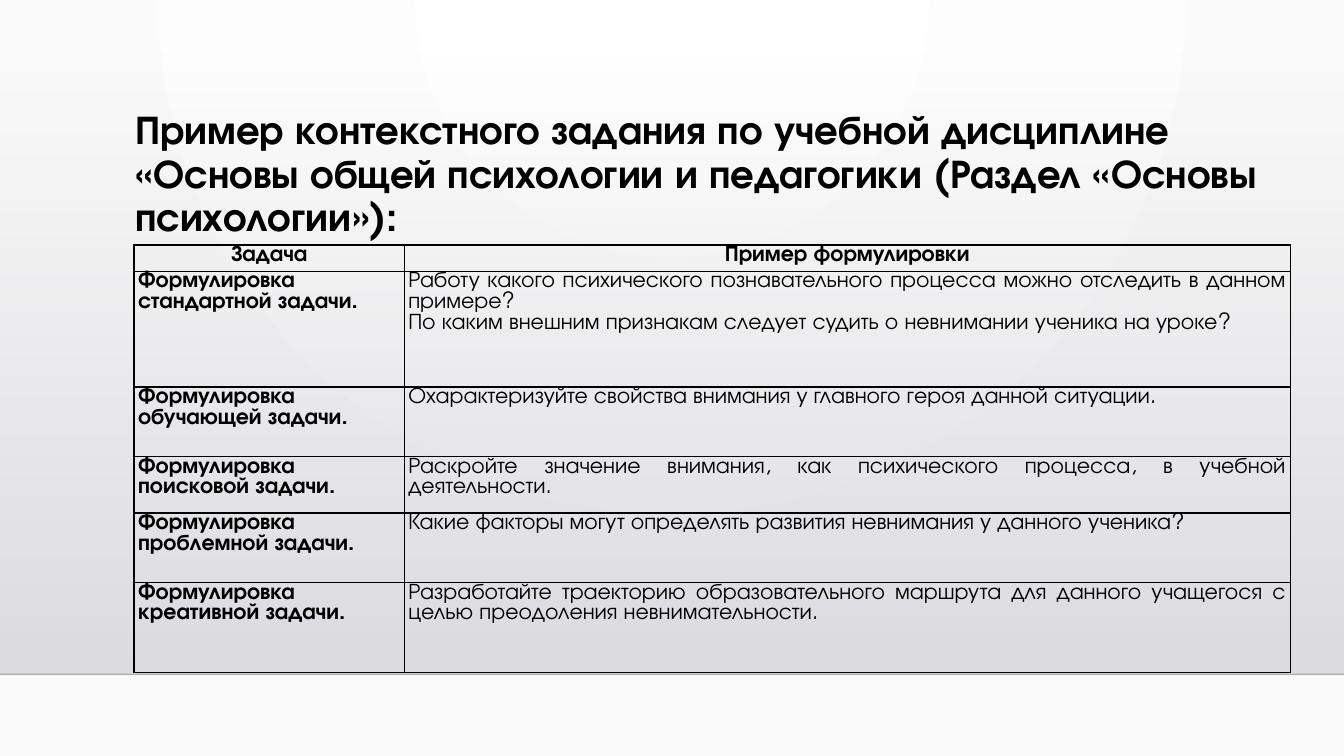
import pptx
import pptx.util
import pptx.dml.color
import pptx.enum.text
import pptx.enum.shapes
import pptx.oxml
import pptx.oxml.ns
import lxml.etree

Inches = pptx.util.Inches
Pt = pptx.util.Pt
RGBColor = pptx.dml.color.RGBColor
PP_ALIGN = pptx.enum.text.PP_ALIGN
qn = pptx.oxml.ns.qn

FONT = "TeX Gyre Adventor"
BLACK = RGBColor(0x00, 0x00, 0x00)
RULE = RGBColor(0x00, 0x00, 0x01)
WHITE = RGBColor(0xFF, 0xFF, 0xFF)
OFF_WHITE = RGBColor(0xFA, 0xFA, 0xFA)
PANEL_TOP = RGBColor(0xDC, 0xDC, 0xE0)
PANEL_BOTTOM = RGBColor(0xDE, 0xDE, 0xE2)


def set_gradient(fill, start, end):
    fill.gradient()
    fill.gradient_angle = 270
    for stop, color, position in zip(fill.gradient_stops, (start, end), (0, 1)):
        stop.color.rgb = color
        stop.position = position


def set_alpha(element, percent):
    color = element.xpath(".//a:srgbClr")[0]
    lxml.etree.SubElement(color, qn("a:alpha")).set("val", str(percent * 1000))


prs = pptx.Presentation()
prs.slide_width = Inches(13.33)
prs.slide_height = Inches(7.5)
s = prs.slides.add_slide(prs.slide_layouts[5])

set_gradient(s.background.fill, WHITE, OFF_WHITE)
lin = s.element.xpath(".//p:bgPr//a:lin")[0]
radial = pptx.oxml.parse_xml(
    f'<a:path {pptx.oxml.ns.nsdecls("a")} path="circle">'
    '<a:fillToRect l="43000" t="0" r="43000" b="100000"/></a:path>'
)
lin.getparent().replace(lin, radial)

title = s.shapes.title
panel = s.shapes.add_shape(
    pptx.enum.shapes.MSO_SHAPE.RECTANGLE, 0, Inches(0.51), prs.slide_width, Inches(6.18)
)
panel.shadow.inherit = False
set_gradient(panel.fill, PANEL_TOP, PANEL_BOTTOM)
set_alpha(panel.element, 0)
panel.line.fill.background()
title.element.addprevious(panel.element)

rule = s.shapes.add_connector(
    pptx.enum.shapes.MSO_CONNECTOR.STRAIGHT, 0, Inches(6.69), prs.slide_width, Inches(6.69)
)
rule.line.color.rgb = RULE
rule.line.width = Pt(1)
set_alpha(rule.element, 20)
lxml.etree.SubElement(rule.element.spPr, qn("a:effectLst"))
title.element.addprevious(rule.element)

title.left, title.top = Inches(1.24), Inches(1.04)
title.width, title.height = Inches(11.65), Inches(1.15)
tf = title.text_frame
tf.text = (
    "Пример контекстного задания по учебной дисциплине "
    "«Основы общей психологии и педагогики (Раздел «Основы психологии»):"
)
tf.word_wrap = True
tf.auto_size = pptx.enum.text.MSO_AUTO_SIZE.NONE
tf.vertical_anchor = pptx.enum.text.MSO_ANCHOR.TOP
p = tf.paragraphs[0]
p.alignment = PP_ALIGN.LEFT
p.line_spacing = 0.9
font = p.runs[0].font
font.name, font.size, font.bold = FONT, Pt(28.8), True
font.color.rgb = BLACK

rows = [
    (0.26, "Задача", "Пример формулировки"),
    (1.15, "Формулировка стандартной задачи.",
     "Работу какого психического познавательного процесса можно отследить в данном примере?\n"
     "По каким внешним признакам следует судить о невнимании ученика на уроке?"),
    (0.69, "Формулировка обучающей задачи.",
     "Охарактеризуйте свойства внимания у главного героя данной ситуации."),
    (0.56, "Формулировка поисковой задачи.",
     "Раскройте значение внимания, как психического процесса, в учебной деятельности."),
    (0.69, "Формулировка проблемной задачи.",
     "Какие факторы могут определять развития невнимания у данного ученика?"),
    (0.89, "Формулировка креативной задачи.",
     "Разработайте траекторию образовательного маршрута для данного учащегося "
     "с целью преодоления невнимательности."),
]
frame = s.shapes.add_table(
    len(rows), 2, Inches(1.33), Inches(2.43), Inches(11.47), Inches(4.24)
)
table = frame.table
table.horz_banding = False
table.columns[0].width = Inches(2.68)
table.columns[1].width = Inches(8.79)

for i, (height, *texts) in enumerate(rows):
    table.rows[i].height = Inches(height)
    for j, text in enumerate(texts):
        cell = table.cell(i, j)
        cell.margin_left = cell.margin_right = Inches(0.04)
        cell.margin_top = cell.margin_bottom = 0
        cell.fill.background()
        cell.text_frame.text = text
        for p in cell.text_frame.paragraphs:
            p.alignment = PP_ALIGN.CENTER if i == 0 else PP_ALIGN.JUSTIFY
            p.line_spacing = 1.0
            for r in p.runs:
                r.font.name, r.font.size = FONT, Pt(16)
                r.font.bold = i == 0 or j == 0
                r.font.color.rgb = BLACK

for tc_pr in frame.element.xpath(".//a:tcPr"):
    for k, side in enumerate(("lnL", "lnR", "lnT", "lnB")):
        border = pptx.oxml.parse_xml(
            f'<a:{side} {pptx.oxml.ns.nsdecls("a")} w="12700"><a:solidFill>'
            f'<a:srgbClr val="{BLACK}"/></a:solidFill></a:{side}>'
        )
        tc_pr.insert(k, border)

prs.save("out.pptx")
